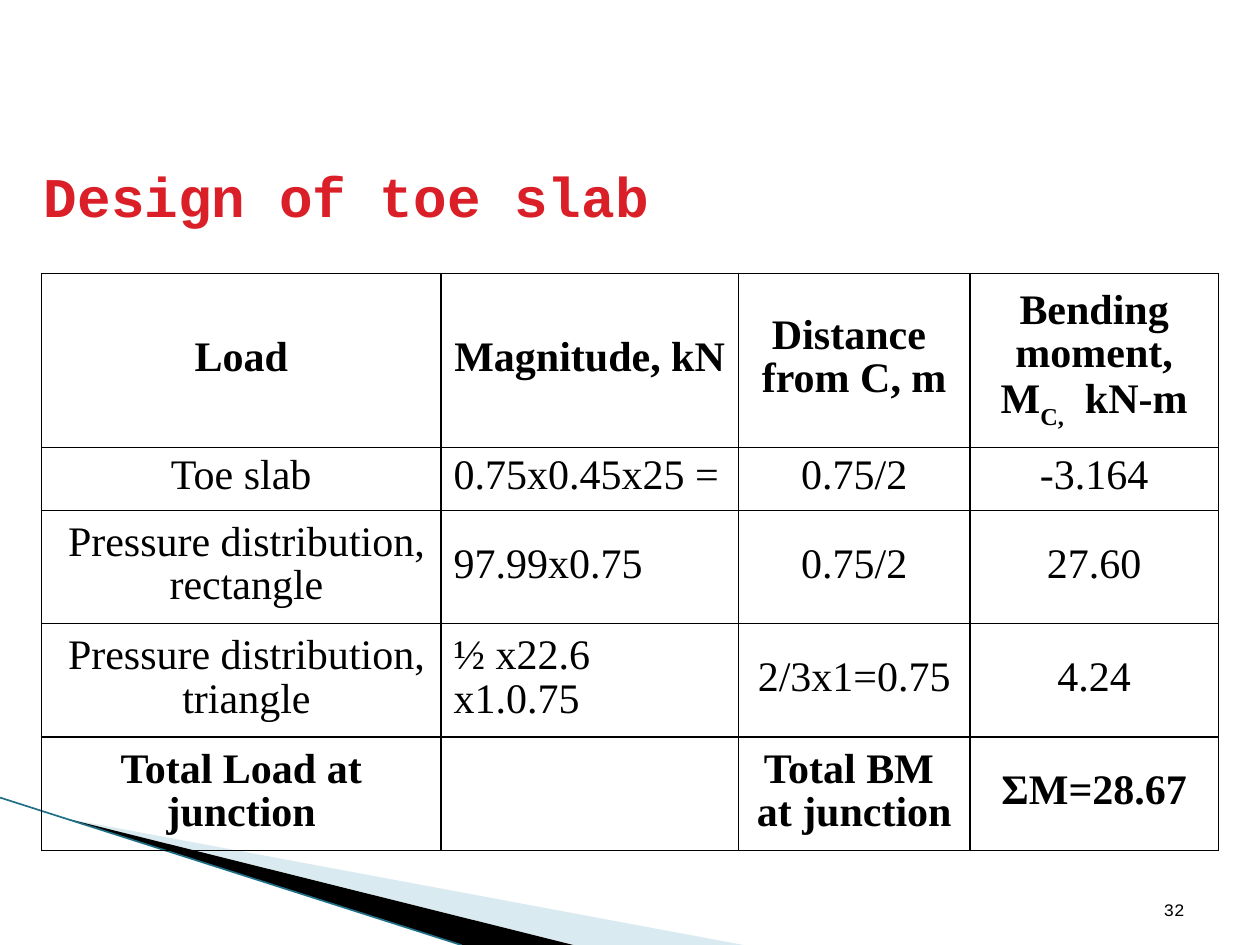
import pptx
import pptx.util
import pptx.oxml
from dataclasses import dataclass
from lxml import etree
from pptx.dml.color import RGBColor
from pptx.enum.shapes import MSO_CONNECTOR
from pptx.enum.text import MSO_ANCHOR, PP_ALIGN
from pptx.oxml.ns import qn
from pptx.util import Inches, Pt


@dataclass(frozen=True)
class Theme:
    black: RGBColor = RGBColor.from_string("000000")
    red: RGBColor = RGBColor.from_string("DA1F28")
    pale_blue: RGBColor = RGBColor.from_string("A0CBDC")
    teal: RGBColor = RGBColor.from_string("1F6F87")
    heading_font: str = "Courier New"
    table_font: str = "Times New Roman"
    title_size: Pt = Pt(32)
    table_size: Pt = Pt(24)
    number_size: Pt = Pt(10)
    border: Pt = Pt(1)


THEME = Theme()
COLUMN_WIDTHS = [3.17, 2.36, 1.84, 1.97]
ROW_HEIGHTS = [1.38, 0.5, 0.9, 0.9, 0.9]
BOLD_ROWS = (0, 4)
# A line break starts a paragraph; text between underscores is a subscript.
ROWS = [
    ["Load", "Magnitude, kN", "Distance \nfrom C, m",
     "Bending\n moment, \nM_C,_  kN-m"],
    ["Toe slab", "0.75x0.45x25 =", "0.75/2", "-3.164"],
    [" Pressure distribution,\n rectangle", "97.99x0.75", "0.75/2", "27.60"],
    [" Pressure distribution,\n triangle", "½ x22.6 x1.0.75", "2/3x1=0.75", "4.24"],
    ["Total Load at junction", "", "Total BM \nat junction", "ΣM=28.67"],
]


def apply_format(target, values):
    for name, value in values.items():
        setattr(target, name, value)


def format_font(font, color, **values):
    apply_format(font, values)
    font.color.rgb = color


def add_wedge(slide, points, color, opacity=100):
    corners = [(Inches(x), Inches(y)) for x, y in points]
    builder = slide.shapes.build_freeform(*corners[0], scale=1.0)
    builder.add_line_segments(corners[1:], close=True)
    shape = builder.convert_to_shape()
    shape.shadow.inherit = False
    shape.line.fill.background()
    shape.fill.solid()
    shape.fill.fore_color.rgb = color
    if opacity < 100:
        color_element = shape._element.spPr.find(".//" + qn("a:srgbClr"))
        etree.SubElement(color_element, qn("a:alpha"), val=str(opacity * 1000))


def add_corner_decoration(slide, left, top, width, height):
    """Two wedges and a thin line sweeping to the bottom edge."""
    right, bottom = left + width, top + height
    tip = (left + 0.54, top + 0.17)
    add_wedge(slide, [tip, (right, bottom), (left + 4.56, bottom)],
              THEME.pale_blue, opacity=40)
    add_wedge(slide, [tip, (left + 4.55, bottom), (left + 3.67, bottom)],
              THEME.black)
    line = slide.shapes.add_connector(
        MSO_CONNECTOR.STRAIGHT, Inches(left), Inches(top),
        Inches(left + 3.66), Inches(bottom))
    line.line.color.rgb = THEME.teal
    line.line.width = Pt(0.95)
    etree.SubElement(line._element.spPr, qn("a:effectLst"))


def add_text(slide, box, text, anchor, alignment, color, **font_values):
    shape = slide.shapes.add_textbox(*map(Inches, box))
    apply_format(shape.text_frame, {"word_wrap": True, "vertical_anchor": anchor})
    paragraph = shape.text_frame.paragraphs[0]
    paragraph.alignment = alignment
    run = paragraph.add_run()
    run.text = text
    format_font(run.font, color, name=THEME.heading_font, **font_values)


def add_borders(cell):
    properties = cell._tc.get_or_add_tcPr()
    for position, side in enumerate(("lnL", "lnR", "lnT", "lnB")):
        line = etree.Element(qn("a:" + side), w=str(THEME.border))
        fill = etree.SubElement(line, qn("a:solidFill"))
        etree.SubElement(fill, qn("a:srgbClr"), val=str(THEME.black))
        properties.insert(position, line)


def fill_cell(cell, text, alignment, bold):
    apply_format(cell, {
        "vertical_anchor": MSO_ANCHOR.MIDDLE,
        "margin_left": Inches(0.1), "margin_right": Inches(0.1),
        "margin_top": Inches(0.02), "margin_bottom": Inches(0.05)})
    cell.fill.background()
    add_borders(cell)
    if not text:
        return
    for index, line in enumerate(text.split("\n")):
        frame = cell.text_frame
        paragraph = frame.add_paragraph() if index else frame.paragraphs[0]
        apply_format(paragraph, {"alignment": alignment, "line_spacing": 0.93})
        for part, words in enumerate(line.split("_")):
            run = paragraph.add_run()
            run.text = words
            format_font(run.font, THEME.black, name=THEME.table_font,
                        size=THEME.table_size, bold=bold)
            if part % 2:
                run._r.get_or_add_rPr().set("baseline", "-30000")


def add_load_table(slide, box):
    table = slide.shapes.add_table(
        len(ROWS), len(COLUMN_WIDTHS), *map(Inches, box)).table
    apply_format(table, {"first_row": False, "horz_banding": False})
    for column, width in zip(table.columns, COLUMN_WIDTHS):
        column.width = Inches(width)
    for row, height in zip(table.rows, ROW_HEIGHTS):
        row.height = Inches(height)
    for row_index, texts in enumerate(ROWS):
        for column_index, text in enumerate(texts):
            left_aligned = column_index == 1 and row_index > 0
            fill_cell(table.cell(row_index, column_index), text,
                      PP_ALIGN.LEFT if left_aligned else PP_ALIGN.CENTER,
                      row_index in BOLD_ROWS)


def main():
    presentation = pptx.Presentation()
    presentation.slide_width = Inches(10)
    presentation.slide_height = Inches(7.5)
    slide = presentation.slides.add_slide(presentation.slide_layouts[6])

    add_corner_decoration(slide, 0, 6.33, 5.9, 1.17)
    # Slide number and title
    add_text(slide, (7.17, 6.83, 2.33, 0.52), "32", MSO_ANCHOR.BOTTOM,
             PP_ALIGN.RIGHT, THEME.black, size=THEME.number_size)
    add_text(slide, (0.25, 1.17, 5.25, 0.75), "Design of toe slab",
             MSO_ANCHOR.MIDDLE, PP_ALIGN.LEFT, THEME.red,
             size=THEME.title_size, bold=True)
    add_load_table(slide, (0.33, 2.17, sum(COLUMN_WIDTHS), sum(ROW_HEIGHTS)))

    presentation.save("out.pptx")


if __name__ == "__main__":
    main()
